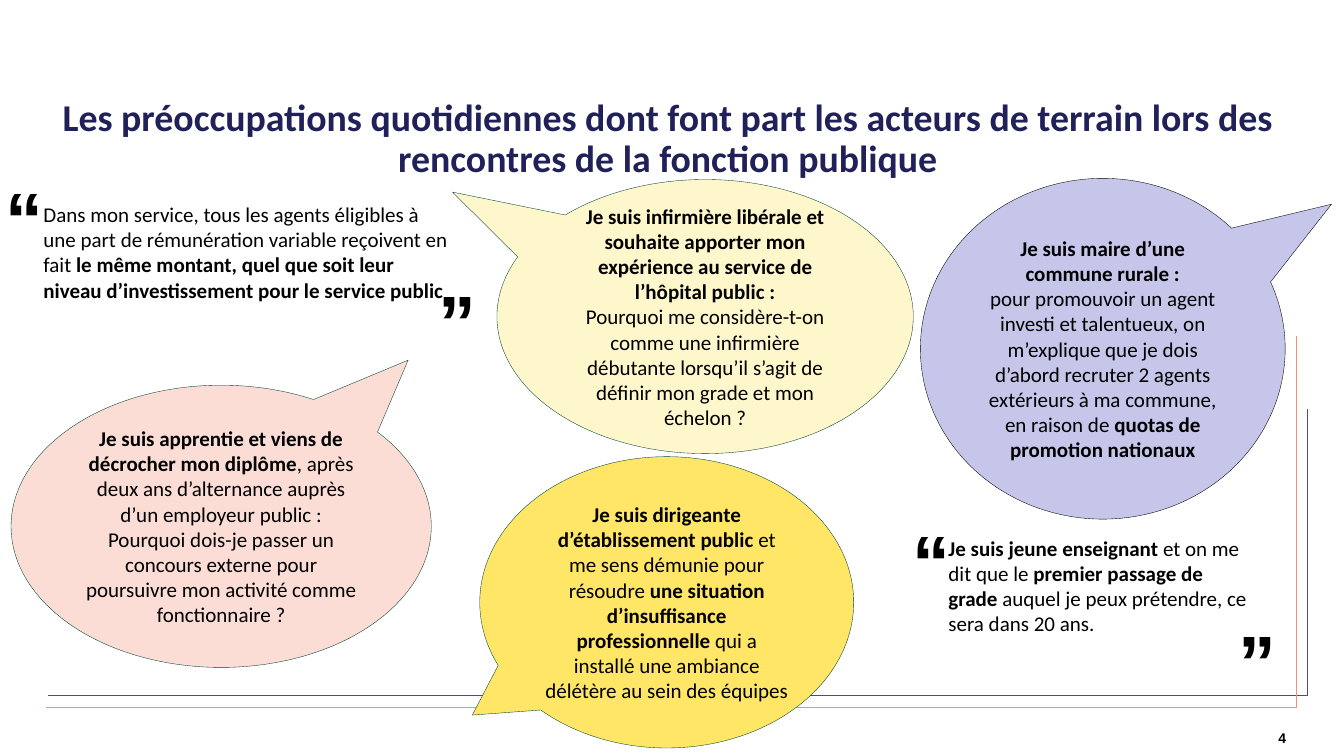
from pptx import Presentation
from pptx.dml.color import RGBColor
from pptx.enum.shapes import MSO_CONNECTOR as Connector, MSO_SHAPE as Shape
from pptx.enum.text import MSO_ANCHOR as Anchor, MSO_AUTO_SIZE as AutoSize, PP_ALIGN as Align
from pptx.oxml.ns import qn
from pptx.util import Pt
from lxml.etree import SubElement

BLACK = RGBColor(0x00, 0x00, 0x00)
NAVY = RGBColor(0x21, 0x21, 0x5A)
SLATE = RGBColor(0x48, 0x4D, 0x7A)
ORANGE = RGBColor(0xF4, 0x8F, 0x70)
GREEN = RGBColor(0x00, 0x40, 0x2F)
PINK = RGBColor(0xFB, 0xDD, 0xD6)
CREAM = RGBColor(0xFF, 0xF7, 0xCC)
LILAC = RGBColor(0xC6, 0xC6, 0xEA)
GOLD = RGBColor(0xFF, 0xE6, 0x66)

# Words between ** are bold.
TITLE = ("**Les préoccupations quotidiennes dont font part les acteurs de terrain "
         "lors des rencontres de la fonction publique**")
PAGE = "**4**"

# (left, top, width, height), tail (x, y), fill, outline, paragraphs
BUBBLES = [
    ((7.9, 275.2, 300.2, 201.6), (0.445, -0.589), PINK, GREEN,
     ["**Je suis apprentie et viens de décrocher mon diplôme**, après deux ans "
      "d’alternance auprès d’un employeur public : Pourquoi dois-je passer un "
      "concours externe pour poursuivre mon activité comme fonctionnaire ?"]),
    ((355, 128.2, 297.4, 195.8), (-0.607, -0.454), CREAM, GREEN,
     ["**Je suis infirmière libérale et souhaite apporter mon expérience au "
      "service de l’hôpital public :**",
      "Pourquoi me considère-t-on comme une infirmière débutante lorsqu’il "
      "s’agit de définir mon grade et mon échelon ?"]),
    ((657.4, 127.4, 260.6, 243.4), (0.627, -0.424), LILAC, BLACK,
     ["**Je suis maire d’une commune rurale :**",
      "pour promouvoir un agent investi et talentueux, on m’explique que je dois "
      "d’abord recruter 2 agents extérieurs à ma commune, en raison de "
      "**quotas de promotion nationaux**"]),
    ((342.7, 326.2, 267.1, 208.1), (-0.52, 0.387), GOLD, GREEN,
     ["**Je suis dirigeante d’établissement public** et me sens démunie pour "
      "résoudre **une situation d’insuffisance professionnelle** qui a installé "
      "une ambiance délétère au sein des équipes"]),
]

# (left, top, width, height), text, opening mark (x, y), closing mark (x, y)
QUOTES = [
    ((27.4, 140.4, 298.8, 97.2),
     "Dans mon service, tous les agents éligibles à une part de rémunération "
     "variable reçoivent en fait **le même montant, quel que soit leur niveau "
     "d’investissement pour le service public**",
     (0, 118.8), (309.6, 192.2)),
    ((673.9, 378.7, 223.2, 97.2),
     "**Je suis jeune enseignant** et on me dit que le **premier passage de "
     "grade** auquel je peux prétendre, ce sera dans 20 ans.",
     (648, 363.6), (881.2, 434.9)),
]

# Bottom left, corner and top right of each border
BORDERS = [
    (SLATE, [(34, 496.8), (933.8, 496.8), (933.8, 292.3)]),
    (ORANGE, [(33, 505.4), (925.9, 505.4), (925.9, 239.8)]),
]


def write(shape, *paragraphs, size=15, font="Calibri", color=BLACK, align=Align.LEFT,
          anchor=Anchor.TOP, inset=3.6, wrap=True, spacing=None):
    frame = shape.text_frame
    frame.word_wrap = wrap
    frame.auto_size = AutoSize.NONE
    frame.vertical_anchor = anchor
    frame.margin_left = frame.margin_right = Pt(inset)
    frame.margin_top = frame.margin_bottom = Pt(inset)
    for number, text in enumerate(paragraphs):
        paragraph = frame.add_paragraph() if number else frame.paragraphs[0]
        paragraph.alignment = align
        paragraph.line_spacing = spacing
        for position, part in enumerate(text.split("**")):
            if part:
                run = paragraph.add_run()
                run.text = part
                run.font.name, run.font.size = font, Pt(size)
                run.font.bold = position % 2 == 1
                run.font.color.rgb = color


def points(values):
    return [Pt(value) for value in values]


def add_text(box, text, **style):
    write(slide.shapes.add_textbox(*points(box)), text, **style)


def add_border(color, corners):
    for start, end in zip(corners, corners[1:]):
        edge = slide.shapes.add_connector(Connector.STRAIGHT, *points(start + end))
        edge.line.color.rgb, edge.line.width = color, Pt(1)
        SubElement(edge.element.spPr, qn("a:effectLst"))


def add_bubble(box, tail, fill, outline, paragraphs):
    bubble = slide.shapes.add_shape(Shape.OVAL_CALLOUT, *points(box))
    bubble.adjustments[0], bubble.adjustments[1] = tail
    bubble.shadow.inherit = False
    bubble.fill.solid()
    bubble.fill.fore_color.rgb = fill
    bubble.line.color.rgb, bubble.line.width = outline, Pt(0.25)
    write(bubble, *paragraphs, align=Align.CENTER, anchor=Anchor.MIDDLE, inset=7.2)


deck = Presentation()
deck.slide_width, deck.slide_height = Pt(960), Pt(540)
slide = deck.slides.add_slide(deck.slide_layouts[5])

title = slide.shapes.title
title.left, title.top, title.width, title.height = points((18, 66.2, 918, 67.7))
write(title, TITLE, size=27, color=NAVY, align=Align.CENTER, anchor=Anchor.MIDDLE,
      spacing=0.9)

for border in BORDERS:
    add_border(*border)
add_text((908.6, 522, 10.1, 10.8), PAGE, size=10, font="Arial", align=Align.RIGHT,
         anchor=Anchor.MIDDLE, inset=0, wrap=False)
for bubble_content in BUBBLES:
    add_bubble(*bubble_content)
for box, quote, opening, closing in QUOTES:
    add_text(box, quote)
    for mark, corner in (("**“**", opening), ("**”**", closing)):
        add_text(corner + (50, 67.7), mark, size=54, font="Arial")

deck.save("out.pptx")
